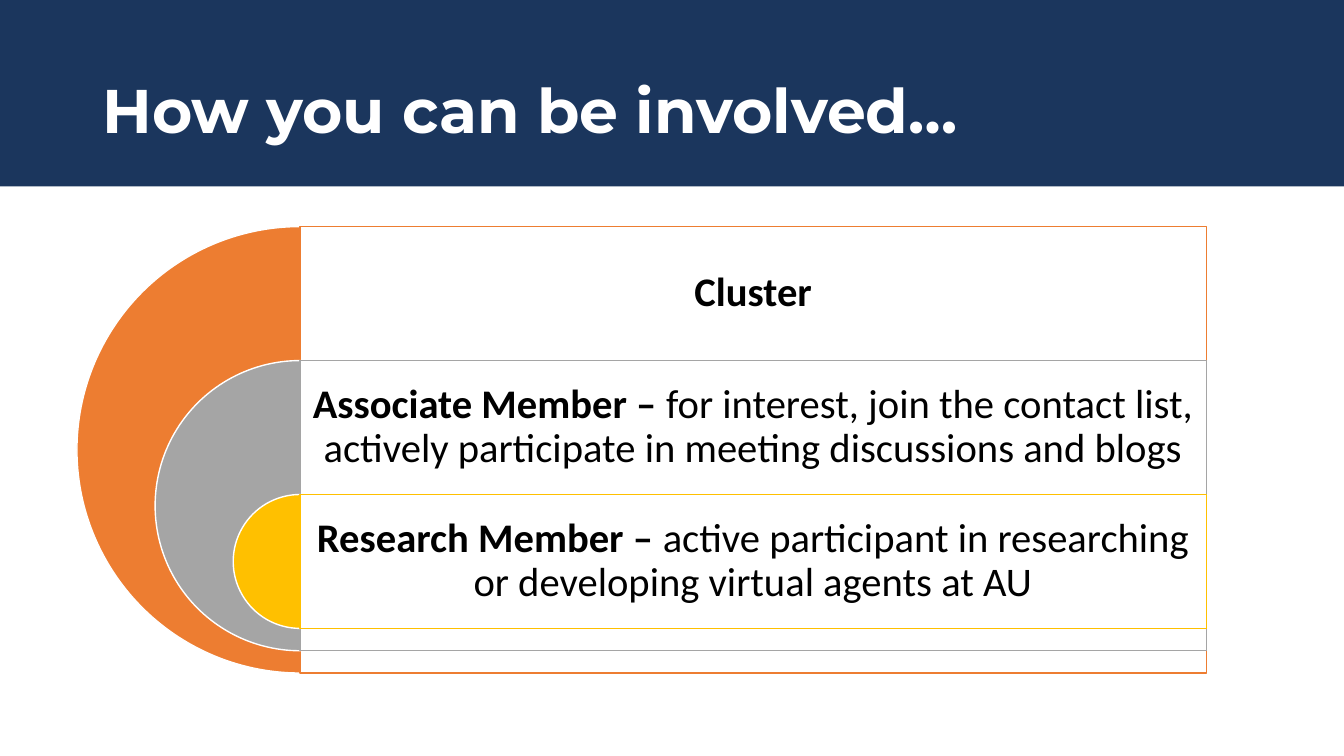
from lxml.etree import SubElement
from pptx import Presentation
from pptx.dml.color import RGBColor
from pptx.enum.shapes import MSO_SHAPE as Preset
from pptx.enum.text import MSO_ANCHOR as Anchor, PP_ALIGN as Align
from pptx.oxml.ns import qn
from pptx.util import Cm, Pt

COLORS = {
    "navy": "1B365D", "white": "FFFFFF", "black": "000000",
    "orange": "ED7D31", "grey": "A5A5A5", "gold": "FFC000",
}
TIERS = [
    ("orange", "Cluster", ""),
    ("grey", "Associate Member – ",
     "for interest, join the contact list, actively participate in meeting "
     "discussions and blogs"),
    ("gold", "Research Member – ",
     "active participant in researching or developing virtual agents at AU"),
]
ROW_SHARE = 0.3
SHRINK = 0.35


def rgb(name):
    return RGBColor.from_string(COLORS[name])


def add_block(slide, preset, box, fill, line=None):
    block = slide.shapes.add_shape(preset, *map(Cm, box))
    block.shadow.inherit = False
    block.fill.solid()
    block.fill.fore_color.rgb = rgb(fill)
    if line:
        block.line.color.rgb = rgb(line)
        block.line.width = Pt(1)
    else:
        block.line.fill.background()
    return block


def add_text(slide, box, parts, font, size, color, align, inset):
    frame = slide.shapes.add_textbox(*map(Cm, box)).text_frame
    frame.word_wrap = True
    frame.vertical_anchor = Anchor.MIDDLE
    frame.margin_left = frame.margin_right = Cm(inset)
    frame.margin_top = frame.margin_bottom = Cm(inset)
    line = frame.paragraphs[0]
    line.alignment = align
    line.line_spacing = 0.9
    line.font.name = font
    line.font.size = Pt(size)
    line.font.color.rgb = rgb(color)
    for words, bold in parts:
        run = line.add_run()
        run.text = words
        run.font.bold = bold


def add_header(slide, left, top, width, height):
    add_block(slide, Preset.RECTANGLE, (left, top, width, height), "navy")
    add_text(slide, (left + 2.33, top + 1.01, width - 4.66, height - 1.01),
             [("How you can be involved…", True)],
             "Montserrat", 44, "white", Align.LEFT, 0.25)


def add_tiers(slide, left, top, width, height):
    center = left + height / 2
    panel_width = width - height / 2
    row = height * ROW_SHARE
    for level, (color, label, detail) in enumerate(TIERS):
        size = height * (1 - SHRINK * level)
        y = top + row * level
        pie = add_block(slide, Preset.PIE,
                        (center - size / 2, y, size, size), color, "white")
        pie.adjustments[0], pie.adjustments[1] = 54, 162
        panel = add_block(slide, Preset.RECTANGLE,
                          (center, y, panel_width, size), "white", color)
        tint = panel.fill._xPr.find(qn("a:solidFill"))[0]
        SubElement(tint, qn("a:alpha"), val="90000")
        parts = [(label, True)] + ([(detail, False)] if detail else [])
        add_text(slide, (center, y, panel_width, row), parts,
                 "Calibri", 29, "black", Align.CENTER, 0.3)


def main():
    deck = Presentation()
    deck.slide_width, deck.slide_height = Cm(33.87), Cm(19.05)
    slide = deck.slides.add_slide(deck.slide_layouts[6])
    add_header(slide, 0, 0, 33.87, 4.7)
    add_tiers(slide, 1.94, 5.71, 28.46, 11.25)
    deck.save("out.pptx")


if __name__ == "__main__":
    main()
